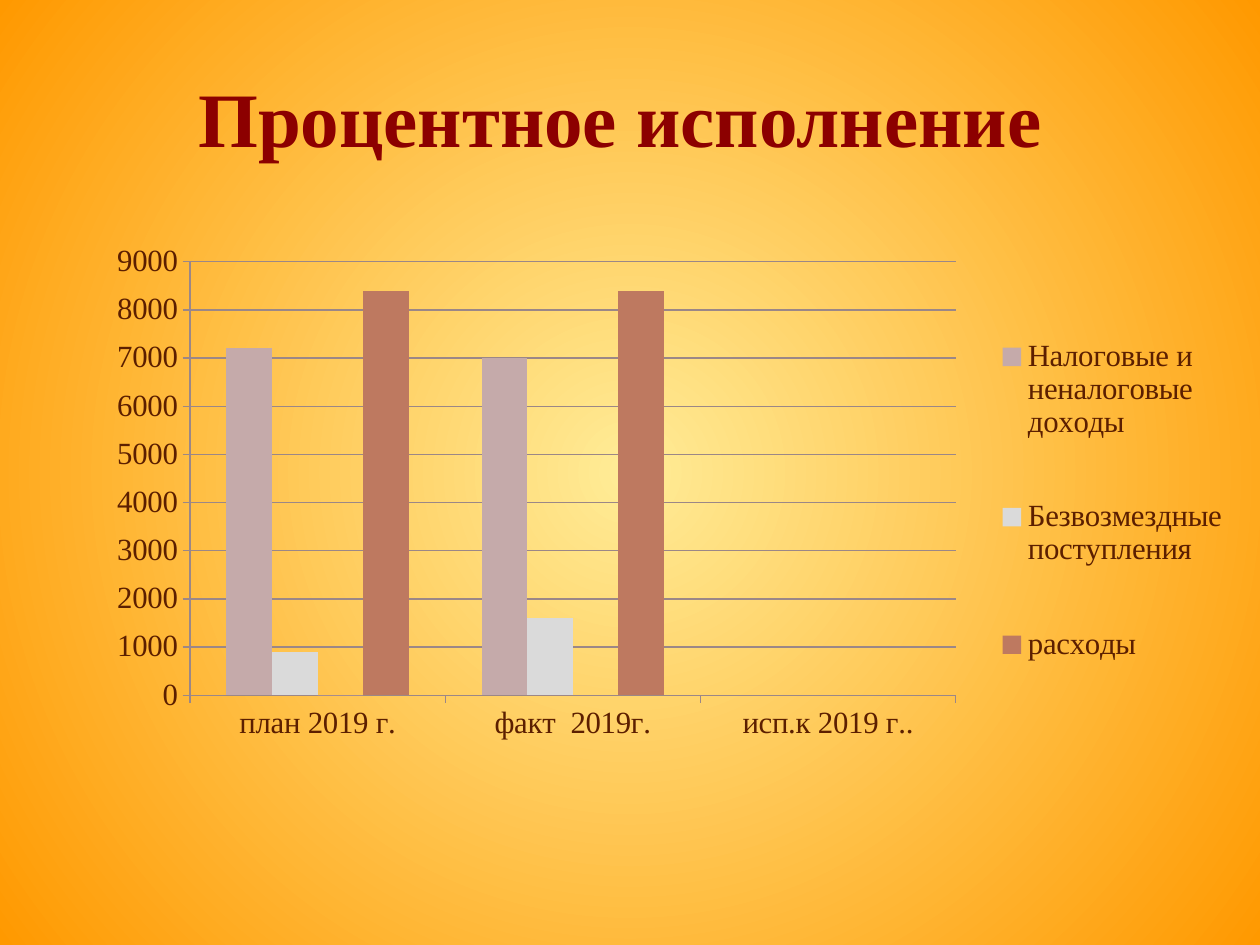
import lxml.etree
import pptx
import pptx.chart.data
import pptx.dml.color
import pptx.enum.chart
import pptx.enum.text
import pptx.oxml.ns
import pptx.util

SCALE = 914400 / 126
FONT = "Times New Roman"
COLORS = {
    "center": "FFEC97", "edge": "FF9900", "title": "8C0000",
    "text": "5C1F00", "line": "9B8787",
}
CATEGORIES = ["план 2019 г.", "факт  2019г.", "исп.к 2019 г.."]
SERIES = [
    ("Налоговые и неналоговые доходы", [7200, 7000, None], "C5AAAA"),
    ("Безвозмездные поступления", [900, 1600, None], "DADADA"),
    ("Series 3", [0, None, None], "FFB9B0"),
    ("расходы", [8400, 8400, None], "BE7960"),
]
HIDDEN_LEGEND_INDEX = 2


def px(length):
    """Turn px into EMU."""
    return pptx.util.Emu(round(length * SCALE))


def rgb(value):
    """Return a color from its hex string."""
    return pptx.dml.color.RGBColor.from_string(value)


def add_child(parent, tag, **attributes):
    """Append a namespaced XML element."""
    return lxml.etree.SubElement(parent, pptx.oxml.ns.qn(tag), attributes)


def paint_background(slide):
    """Fill the background with a circular gradient."""
    fill = slide.background.fill
    fill.gradient()
    for stop, name, position in zip(fill.gradient_stops, ("center", "edge"), (0, 1)):
        stop.color.rgb = rgb(COLORS[name])
        stop.position = position
    gradient = slide.element.find(".//" + pptx.oxml.ns.qn("a:gradFill"))
    linear = gradient.find(pptx.oxml.ns.qn("a:lin"))
    if linear is not None:
        gradient.remove(linear)
    circle = add_child(gradient, "a:path", path="circle")
    add_child(circle, "a:fillToRect", l="50000", t="50000", r="50000", b="50000")


def add_title(slide, left, top, width, height):
    """Place the centred heading."""
    shape = slide.shapes.add_textbox(px(left), px(top), px(width), px(height))
    frame = shape.text_frame
    frame.word_wrap = True
    frame.vertical_anchor = pptx.enum.text.MSO_ANCHOR.MIDDLE
    paragraph = frame.paragraphs[0]
    paragraph.alignment = pptx.enum.text.PP_ALIGN.CENTER
    run = paragraph.add_run()
    run.text = "Процентное исполнение "
    run.font.name = FONT
    run.font.size = pptx.util.Pt(44)
    run.font.bold = True
    run.font.color.rgb = rgb(COLORS["title"])


def make_layout(x, y, width, height, inner=False):
    """Build a manual chart layout from fractions of the chart area."""
    layout = pptx.oxml.parse_xml("<c:layout %s/>" % pptx.oxml.ns.nsdecls("c"))
    manual = add_child(layout, "c:manualLayout")
    if inner:
        add_child(manual, "c:layoutTarget", val="inner")
    for tag in ("c:xMode", "c:yMode"):
        add_child(manual, tag, val="edge")
    for tag, value in zip(("c:x", "c:y", "c:w", "c:h"), (x, y, width, height)):
        add_child(manual, tag, val=str(value))
    return layout


def style_line(line):
    """Apply the thin axis line."""
    line.color.rgb = rgb(COLORS["line"])
    line.width = pptx.util.Pt(0.75)


def arrange_chart(chart):
    """Fix the plot and legend areas and hide the unused legend entry."""
    plot_area = chart.element.find(".//" + pptx.oxml.ns.qn("c:plotArea"))
    for layout in plot_area.findall(pptx.oxml.ns.qn("c:layout")):
        plot_area.remove(layout)
    plot_area.insert(0, make_layout(0.1, 0.05, 0.66, 0.78, inner=True))
    legend = chart.element.find(".//" + pptx.oxml.ns.qn("c:legend"))
    for layout in legend.findall(pptx.oxml.ns.qn("c:layout")):
        legend.remove(layout)
    entry = pptx.oxml.parse_xml("<c:legendEntry %s/>" % pptx.oxml.ns.nsdecls("c"))
    add_child(entry, "c:idx", val=str(HIDDEN_LEGEND_INDEX))
    add_child(entry, "c:delete", val="1")
    position = legend.find(pptx.oxml.ns.qn("c:legendPos"))
    position.addnext(entry)
    entry.addnext(make_layout(0.79, 0.08, 0.21, 0.8))


def add_budget_chart(slide, left, top, width, height):
    """Place the column chart of income and spending."""
    data = pptx.chart.data.CategoryChartData()
    data.categories = CATEGORIES
    for name, values, color in SERIES:
        data.add_series(name, values)
    chart = slide.shapes.add_chart(
        pptx.enum.chart.XL_CHART_TYPE.COLUMN_CLUSTERED,
        px(left), px(top), px(width), px(height), data,
    ).chart
    chart.has_title = False
    chart.font.name = FONT
    chart.font.size = pptx.util.Pt(17.6)
    chart.font.color.rgb = rgb(COLORS["text"])
    plot = chart.plots[0]
    plot.gap_width = 160
    plot.overlap = 0
    plot.vary_by_categories = False
    for series, (name, values, color) in zip(plot.series, SERIES):
        series.format.fill.solid()
        series.format.fill.fore_color.rgb = rgb(color)
        series.invert_if_negative = False
    for axis in (chart.category_axis, chart.value_axis):
        axis.major_tick_mark = pptx.enum.chart.XL_TICK_MARK.OUTSIDE
        axis.minor_tick_mark = pptx.enum.chart.XL_TICK_MARK.NONE
        style_line(axis.format.line)
    chart.category_axis.tick_label_position = pptx.enum.chart.XL_TICK_LABEL_POSITION.LOW
    value_axis = chart.value_axis
    value_axis.minimum_scale = 0
    value_axis.maximum_scale = 9000
    value_axis.major_unit = 1000
    value_axis.has_major_gridlines = True
    style_line(value_axis.major_gridlines.format.line)
    chart.has_legend = True
    chart.legend.position = pptx.enum.chart.XL_LEGEND_POSITION.RIGHT
    chart.legend.include_in_layout = False
    arrange_chart(chart)


def main():
    """Build and save the presentation."""
    presentation = pptx.Presentation()
    presentation.slide_width = px(1260)
    presentation.slide_height = px(945)
    slide = presentation.slides.add_slide(presentation.slide_layouts[6])
    paint_background(slide)
    add_title(slide, 63, 38, 1134, 158)
    add_budget_chart(slide, 74, 234, 1160, 556)
    presentation.save("out.pptx")


if __name__ == "__main__":
    main()
